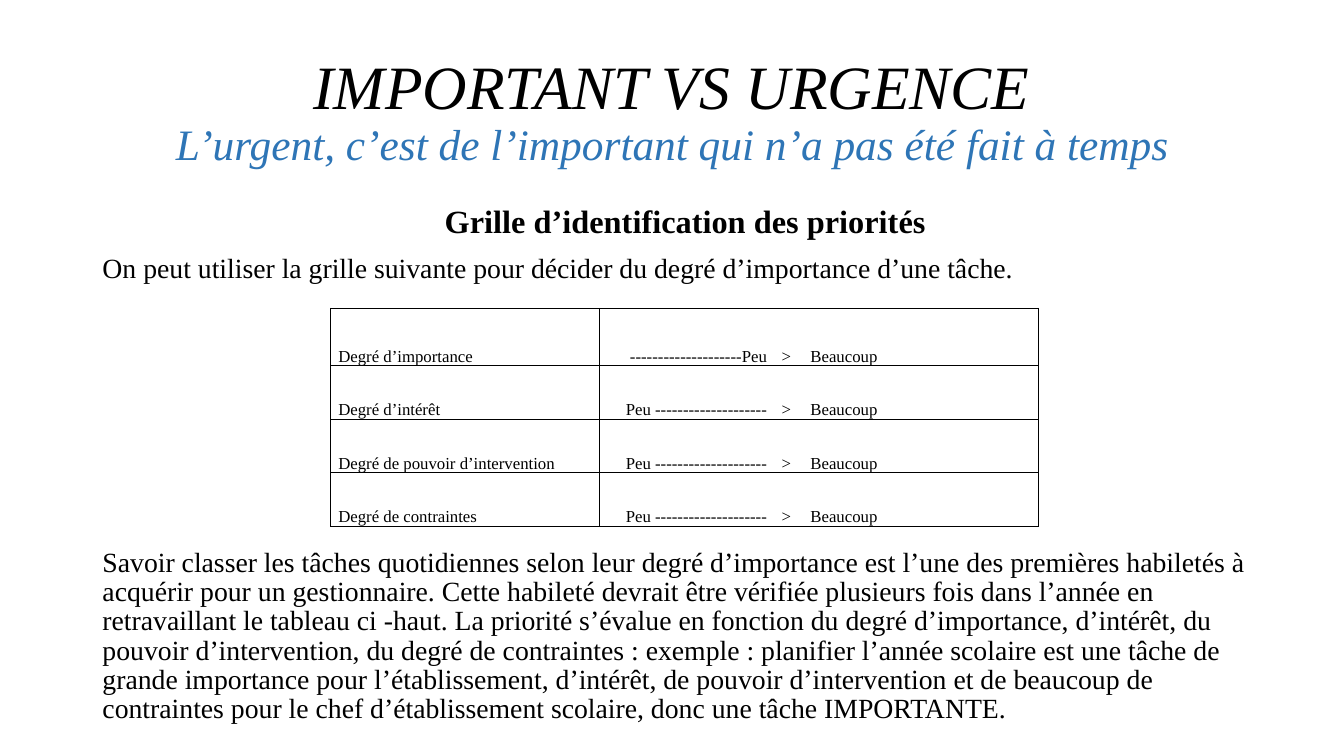
from lxml import etree
from pptx import Presentation
from pptx.dml.color import RGBColor
from pptx.enum.text import MSO_ANCHOR, MSO_AUTO_SIZE, PP_ALIGN
from pptx.oxml.ns import qn
from pptx.util import Pt

CENTER, LEFT, RIGHT = PP_ALIGN.CENTER, PP_ALIGN.LEFT, PP_ALIGN.RIGHT
TOP, MIDDLE, BOTTOM = MSO_ANCHOR.TOP, MSO_ANCHOR.MIDDLE, MSO_ANCHOR.BOTTOM
NO_FIT = MSO_AUTO_SIZE.NONE

FONT = "Times New Roman"
COLORS = {"ink": "000000", "blue": "2E75B6"}

TITLE = "IMPORTANT VS URGENCE"
MOTTO = "L’urgent, c’est de l’important qui n’a pas été fait à temps"
# text, size, bold, align, space before
BODY = [
    ("Grille d’identification des priorités", 23.1, True, CENTER, 10),
    ("On peut utiliser la grille suivante pour décider du degré "
     "d’importance d’une tâche.", 19.8, False, LEFT, 10),
    ("Savoir classer les tâches quotidiennes selon leur degré d’importance "
     "est l’une des premières habiletés à acquérir pour un gestionnaire. "
     "Cette habileté devrait être vérifiée plusieurs fois dans l’année en "
     "retravaillant le tableau ci -haut. La priorité s’évalue en fonction du "
     "degré d’importance, d’intérêt, du pouvoir d’intervention, du degré de "
     "contraintes : exemple : planifier l’année scolaire est une tâche de "
     "grande importance pour l’établissement, d’intérêt, de pouvoir "
     "d’intervention et de beaucoup de contraintes pour le chef "
     "d’établissement scolaire, donc une tâche IMPORTANTE.",
     19.8, False, LEFT, 189),
]
# label, scale, row height, line spacing
GRID = [
    ("Degré d’importance", "--------------------Peu", 41, 1.0),
    ("Degré d’intérêt", "Peu --------------------", 38.2, Pt(13.2)),
    ("Degré de pouvoir d’intervention", "Peu --------------------", 38.2, Pt(13.3)),
    ("Degré de contraintes", "Peu --------------------", 38.2, Pt(13.2)),
]
# width, align, indent, sides with a line
COLS = [
    (192.2, LEFT, 5.4, "LRTB"),
    (119.5, RIGHT, 0, "LTB"),
    (20.2, RIGHT, 0, "TB"),
    (173.5, LEFT, 10.8, "RTB"),
]


def add_run(para, text, size, color="ink", bold=False, slant=False):
    run = para.add_run()
    run.text = text
    font = run.font
    font.name, font.size = FONT, Pt(size)
    font.bold, font.italic = bold, slant
    font.color.rgb = RGBColor.from_string(COLORS[color])


def place(shape, left, top, width, height, anchor):
    shape.left, shape.top = Pt(left), Pt(top)
    shape.width, shape.height = Pt(width), Pt(height)
    frame = shape.text_frame
    frame.word_wrap, frame.auto_size = True, NO_FIT
    frame.vertical_anchor = anchor
    return frame


def set_lines(cell, sides):
    """Draw the named sides of a cell and hide the others."""
    props = cell._tc.get_or_add_tcPr()
    for side in "LRTB":
        line = etree.SubElement(props, qn("a:ln" + side), w=str(Pt(1)))
        if side in sides:
            fill = etree.SubElement(line, qn("a:solidFill"))
            etree.SubElement(fill, qn("a:srgbClr"), val=COLORS["ink"])
        else:
            etree.SubElement(line, qn("a:noFill"))


def add_title(slide):
    frame = place(slide.shapes.title, 66, 28.8, 828, 104.4, MIDDLE)
    para = frame.paragraphs[0]
    para.alignment, para.line_spacing = CENTER, 0.9
    add_run(para, TITLE, 44, slant=True)
    para.add_line_break()
    add_run(para, MOTTO, 31, "blue", slant=True)


def add_body(slide):
    frame = place(slide.placeholders[1], 66, 144, 847.5, 381.6, TOP)
    for i, (text, size, bold, align, gap) in enumerate(BODY):
        para = frame.add_paragraph() if i else frame.paragraphs[0]
        para.alignment, para.line_spacing = align, 0.88
        para.space_before = Pt(gap)
        props = para._p.get_or_add_pPr()
        props.set("marL", "0")
        props.set("indent", "0")
        etree.SubElement(props, qn("a:buNone"))
        add_run(para, text, size, bold=bold)


def add_grid(slide):
    width = sum(col[0] for col in COLS)
    height = sum(row[2] for row in GRID)
    table = slide.shapes.add_table(len(GRID), len(COLS), Pt(236.2), Pt(220.3),
                                   Pt(width), Pt(height)).table
    table.first_row = table.horz_banding = False
    for c, col in enumerate(COLS):
        table.columns[c].width = Pt(col[0])
    for r, (label, scale, tall, pitch) in enumerate(GRID):
        table.rows[r].height = Pt(tall)
        for c, text in enumerate((label, scale, "> ", "Beaucoup")):
            align, indent, sides = COLS[c][1:]
            cell = table.cell(r, c)
            cell.margin_left = cell.margin_right = 0
            cell.margin_top = cell.margin_bottom = 0
            cell.vertical_anchor = BOTTOM
            set_lines(cell, sides)
            cell.fill.background()
            para = cell.text_frame.paragraphs[0]
            para.alignment, para.line_spacing = align, pitch
            para._p.get_or_add_pPr().set("marL", str(Pt(indent)))
            add_run(para, text, 12)


def main():
    deck = Presentation()
    deck.slide_width, deck.slide_height = Pt(960), Pt(540)
    slide = deck.slides.add_slide(deck.slide_layouts[1])
    add_title(slide)
    add_body(slide)
    add_grid(slide)
    deck.save("out.pptx")


if __name__ == "__main__":
    main()
